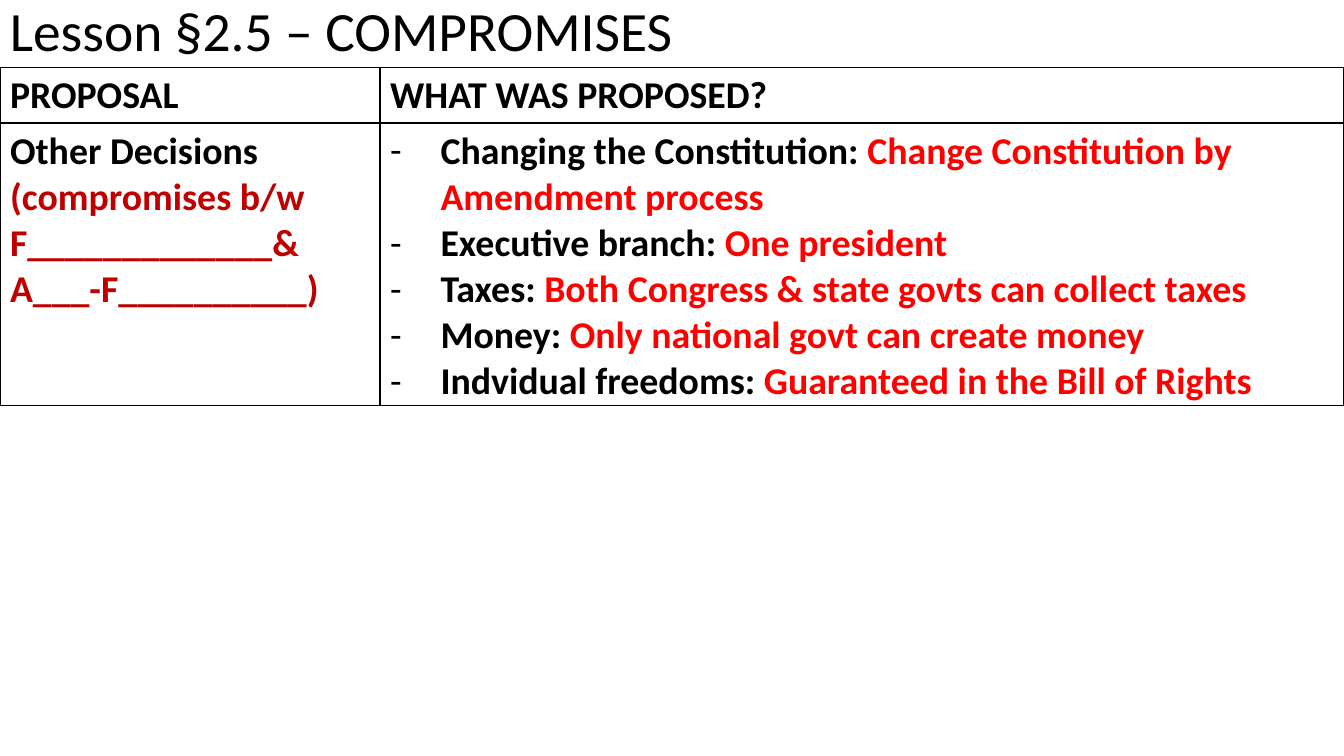
from lxml.etree import SubElement
from pptx import Presentation
from pptx.dml.color import RGBColor
from pptx.enum.text import MSO_ANCHOR
from pptx.oxml.ns import qn
from pptx.util import Inches, Pt

COLORS = {"black": "000000", "white": "FFFFFF", "dark_red": "C00000", "red": "FF0000"}
FONT = "Calibri"
SLIDE_WIDTH, SLIDE_HEIGHT = 13.33, 7.5
TITLE_HEIGHT = 0.67
COLUMN_WIDTHS = [3.77, 9.56]
ROW_HEIGHTS = [0.43, 2.56]

DECISIONS = [
    ("Changing the Constitution: ", "Change Constitution by Amendment process"),
    ("Executive branch: ", "One president"),
    ("Taxes: ", "Both Congress & state govts can collect taxes"),
    ("Money: ", "Only national govt can create money"),
    ("Indvidual freedoms: ", "Guaranteed in the Bill of Rights"),
]


def add_run(paragraph, text, size=27, bold=True, color="black"):
    run = paragraph.add_run()
    run.text = text
    run.font.name = FONT
    run.font.size = Pt(size)
    run.font.bold = bold
    run.font.color.rgb = RGBColor.from_string(COLORS[color])


def add_dash(paragraph, indent=0.5):
    properties = paragraph._p.get_or_add_pPr()
    properties.set("marL", str(Inches(indent)))
    properties.set("indent", str(-Inches(indent)))
    SubElement(properties, qn("a:buFont"), typeface=FONT)
    SubElement(properties, qn("a:buChar"), char="-")


def style_cell(cell):
    """Draw a black border on every side and fill the cell white."""
    properties = cell._tc.get_or_add_tcPr()
    for side in ("lnL", "lnR", "lnT", "lnB"):
        border = SubElement(properties, qn(f"a:{side}"), w=str(Pt(1)))
        fill = SubElement(border, qn("a:solidFill"))
        SubElement(fill, qn("a:srgbClr"), val=COLORS["black"])
    cell.fill.solid()
    cell.fill.fore_color.rgb = RGBColor.from_string(COLORS["white"])


def add_title(slide, text):
    title = slide.shapes.add_textbox(0, 0, Inches(SLIDE_WIDTH), Inches(TITLE_HEIGHT))
    frame = title.text_frame
    frame.word_wrap = True
    frame.vertical_anchor = MSO_ANCHOR.MIDDLE
    frame.paragraphs[0].line_spacing = 0.9
    add_run(frame.paragraphs[0], text, size=39.6, bold=False)


def add_proposals_table(slide):
    table = slide.shapes.add_table(
        len(ROW_HEIGHTS), len(COLUMN_WIDTHS), 0, Inches(TITLE_HEIGHT),
        Inches(sum(COLUMN_WIDTHS)), Inches(sum(ROW_HEIGHTS)),
    ).table
    for column, width in zip(table.columns, COLUMN_WIDTHS):
        column.width = Inches(width)
    for row, height in zip(table.rows, ROW_HEIGHTS):
        row.height = Inches(height)
    for cell in table.iter_cells():
        style_cell(cell)

    for index, heading in enumerate(("PROPOSAL", "WHAT WAS PROPOSED?")):
        add_run(table.cell(0, index).text_frame.paragraphs[0], heading)

    proposal = table.cell(1, 0).text_frame.paragraphs[0]
    add_run(proposal, "Other Decisions ")
    add_run(proposal, "(compromises b/w F_____________& A___-F__________)", color="dark_red")

    decisions = table.cell(1, 1).text_frame
    for index, (topic, outcome) in enumerate(DECISIONS):
        paragraph = decisions.add_paragraph() if index else decisions.paragraphs[0]
        add_dash(paragraph)
        add_run(paragraph, topic)
        add_run(paragraph, outcome, color="red")


def main():
    presentation = Presentation()
    presentation.slide_width = Inches(SLIDE_WIDTH)
    presentation.slide_height = Inches(SLIDE_HEIGHT)
    slide = presentation.slides.add_slide(presentation.slide_layouts[6])
    add_title(slide, "Lesson §2.5 – COMPROMISES")
    add_proposals_table(slide)
    presentation.save("out.pptx")


if __name__ == "__main__":
    main()
